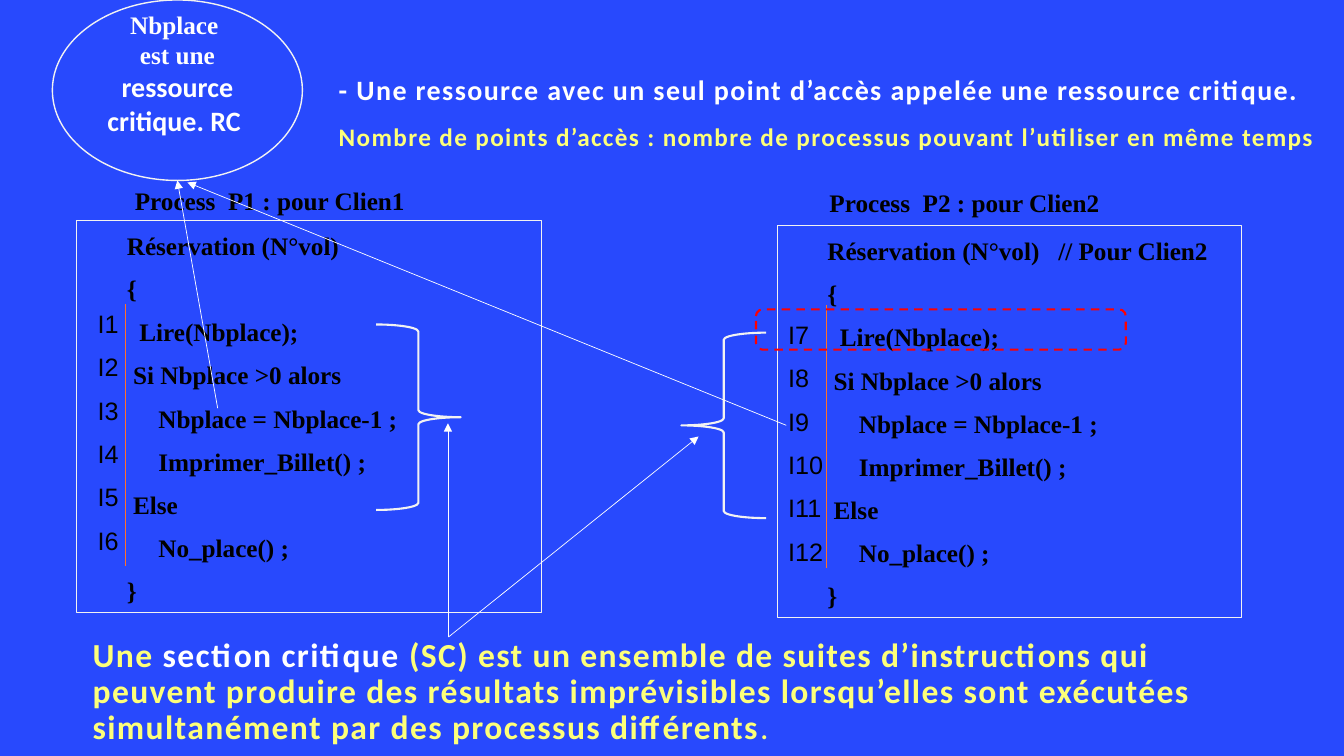
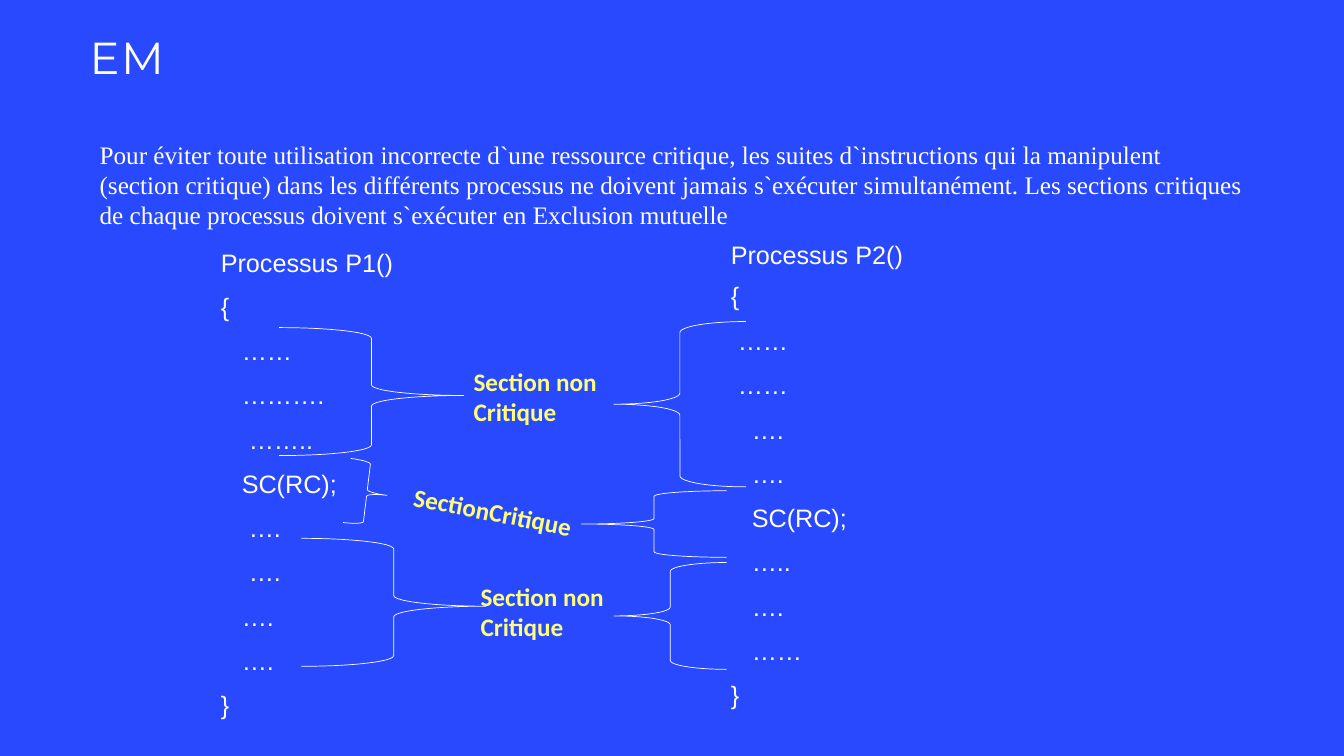
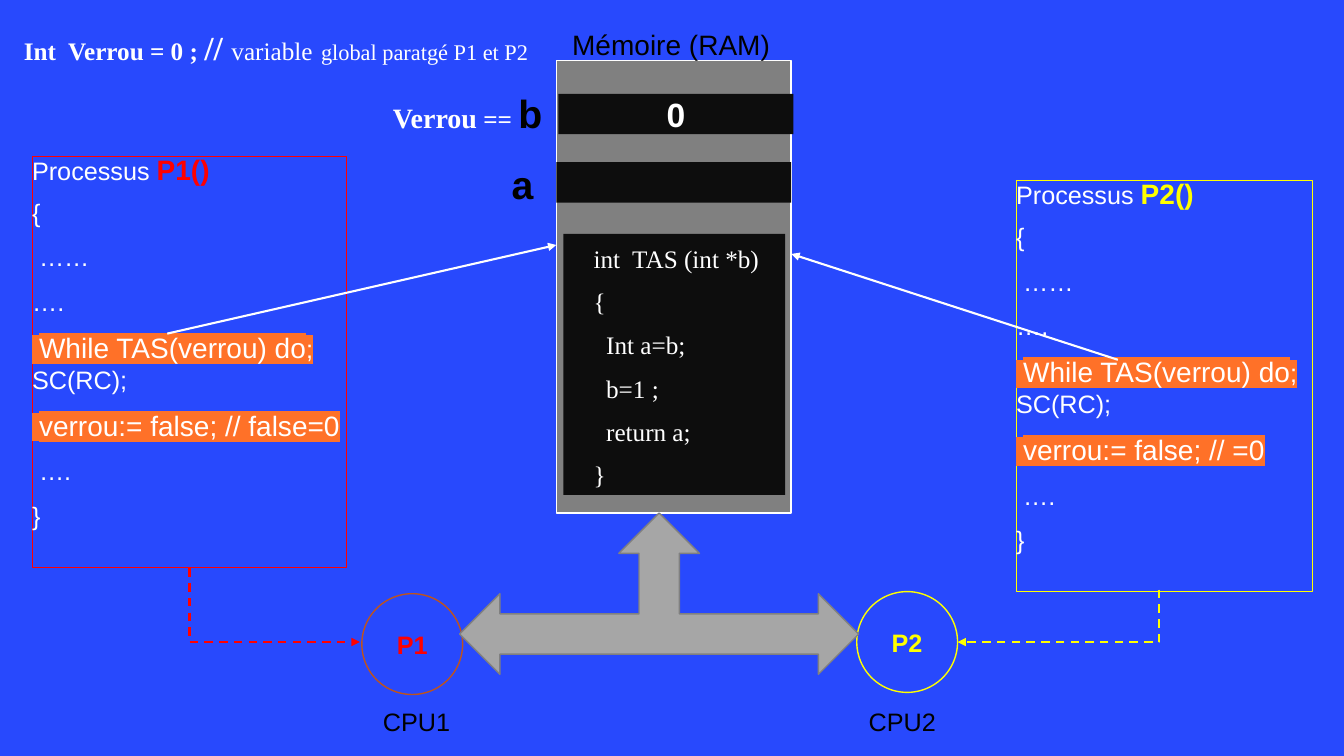
"""Build three slides on critical resources, mutual exclusion and the TAS instruction."""
from pptx import Presentation
from pptx.dml.color import RGBColor
from pptx.enum.dml import MSO_LINE
from pptx.enum.shapes import MSO_CONNECTOR, MSO_SHAPE
from pptx.enum.text import MSO_ANCHOR, PP_ALIGN
from pptx.oxml.ns import qn
from pptx.util import Pt
from lxml import etree

RECT, ROUNDED, OVAL = MSO_SHAPE.RECTANGLE, MSO_SHAPE.ROUNDED_RECTANGLE, MSO_SHAPE.OVAL
LEFT_BRACE, RIGHT_BRACE = MSO_SHAPE.LEFT_BRACE, MSO_SHAPE.RIGHT_BRACE
BUS_ARROW = MSO_SHAPE.LEFT_RIGHT_UP_ARROW
STRAIGHT, ELBOW = MSO_CONNECTOR.STRAIGHT, MSO_CONNECTOR.ELBOW
TOP, MIDDLE = MSO_ANCHOR.TOP, MSO_ANCHOR.MIDDLE
LEFT, CENTER = PP_ALIGN.LEFT, PP_ALIGN.CENTER
DASH = MSO_LINE.DASH
NO_TABLE_STYLE = "{2D5ABB26-0587-4C30-8999-92F81FD0307C}"


class Theme:
    """Colours, fonts and text styles of the deck."""
    blue, white, pale, black, ink = "2849FD", "FFFFFF", "F2F2F2", "000000", "0D0D0D"
    cream, yellow, red, orange, rust = "FDFF7A", "FFFF00", "FF0000", "FF7128", "BD541E"
    gray, silver = "808080", "A6A6A6"
    serif, sans, body, display = "Times New Roman", "Arial", "Calibri", "Montserrat"
    code = dict(font=serif, size=18, color=black, bold=True)
    prose = dict(font=serif, size=18, color=white)
    strong = dict(prose, bold=True)
    plain = dict(font=sans, size=18, color=white)
    dark = dict(plain, color=black)
    marked = dict(plain, mark=orange)
    big_marked = dict(marked, size=20)
    letter = dict(dark, size=28, bold=True)
    title = dict(font=display, size=32, color=white, spacing=1)
    lead = dict(font=body, size=20, color=white, bold=True, spacing=1)
    note = dict(lead, size=18, color=cream)
    definition = dict(lead, size=24, color=cream)
    section = dict(font=body, size=18, color=cream, bold=True)


def place(slide, kind, box, paragraphs=(), line=None, weight=0.75, fill=None, dash=None,
          anchor=TOP, align=LEFT, leading=None, before=0, inset=True, turn=0):
    """Add a text box (kind None) or preset shape holding (indent, runs) paragraphs."""
    left, top, width, height = map(Pt, box)
    if kind is None:
        item = slide.shapes.add_textbox(left, top, width, height)
    else:
        item = slide.shapes.add_shape(kind, left, top, width, height)
        item.shadow.inherit = False
        if fill:
            item.fill.solid()
            item.fill.fore_color.rgb = RGBColor.from_string(fill)
        else:
            item.fill.background()
        if line:
            item.line.color.rgb = RGBColor.from_string(line)
            item.line.width = Pt(weight)
            if dash:
                item.line.dash_style = dash
        else:
            item.line.fill.background()
    item.rotation = turn
    frame = item.text_frame
    frame.word_wrap = True
    frame.vertical_anchor = anchor
    if not inset:
        frame.margin_left = frame.margin_right = frame.margin_top = frame.margin_bottom = 0
    for number, (indent, runs) in enumerate(paragraphs):
        paragraph = frame.add_paragraph() if number else frame.paragraphs[0]
        paragraph.alignment = align
        paragraph.space_before = Pt(before)
        if leading:
            paragraph.line_spacing = leading
        if indent:
            paragraph._p.get_or_add_pPr().set("marL", str(Pt(indent)))
        for text, style in runs:
            run = paragraph.add_run()
            run.text = text
            run.font.size = Pt(style["size"])
            run.font.bold = style.get("bold", False)
            run.font.color.rgb = RGBColor.from_string(style["color"])
            run.font.name = style["font"]
            properties = run._r.get_or_add_rPr()
            if "spacing" in style:
                properties.set("spc", str(style["spacing"] * 100))
            if "mark" in style:
                highlight = etree.Element(qn("a:highlight"))
                etree.SubElement(highlight, qn("a:srgbClr"), val=style["mark"])
                properties.find(qn("a:solidFill")).addnext(highlight)
    return item


def link(slide, start, end, color=Theme.white, weight=0.5, kind=STRAIGHT, dash=None, arrow=True):
    """Draw a line between two points, by default with an arrowhead at its end."""
    item = slide.shapes.add_connector(kind, *map(Pt, start + end))
    item.line.color.rgb = RGBColor.from_string(color)
    item.line.width = Pt(weight)
    if dash:
        item.line.dash_style = dash
    if arrow:
        etree.SubElement(item.line._get_or_add_ln(), qn("a:tailEnd"), type="triangle")
    properties = item._element.spPr
    if kind == ELBOW:
        guides = properties.find(qn("a:prstGeom")).find(qn("a:avLst"))
        etree.SubElement(guides, qn("a:gd"), name="adj1", fmla="val 0")
    etree.SubElement(properties, qn("a:effectLst"))


deck = Presentation()
deck.slide_width, deck.slide_height = Pt(960), Pt(540)
backdrop = deck.slide_master.background.fill
backdrop.solid()
backdrop.fore_color.rgb = RGBColor.from_string(Theme.blue)
blank = deck.slide_layouts[6]
resource, exclusion, lock = [deck.slides.add_slide(blank) for _ in range(3)]

place(resource, None, (242, 39.6, 714, 90), [
    (0, [("- Une ressource avec un seul point d’accès appelée une ressource critique.", Theme.lead)]),
    (0, [("Nombre de points d’accès : nombre de processus pouvant l’utiliser en même temps",
          Theme.note)]),
], leading=1.5, inset=False)

reservation = [(0, "{"), (9, "Lire(Nbplace);"), (4.5, "Si\u00a0Nbplace >0 alors"),
               (22.5, "Nbplace = Nbplace-1\u00a0;"), (22.5, "Imprimer_Billet()\u00a0;"),
               (4.5, "Else"), (22.5, "No_place()\u00a0;"), (0, "}")]
clients = [
    ("Process  P1 : pour Clien1", (89.3, 128.9), "Réservation (N°vol)",
     (54.7, 157.7), (62.6, 218.2), 1, (89.3, 217.4)),
    ("Process  P2 : pour Clien2", (585.4, 130.3), "Réservation (N°vol)   // Pour Clien2",
     (555.1, 161.3), (555.8, 226.1), 7, (590.4, 218.2)),
]
for heading, heading_at, signature, code_at, steps_at, first_step, rule_at in clients:
    place(resource, RECT, code_at + (331.9, 280.1),
          [(28.8 + indent, [(text, Theme.code)]) for indent, text in [(0, signature)] + reservation],
          line=Theme.pale, leading=1.15, before=6)
    steps = resource.shapes.add_table(7, 1, *map(Pt, steps_at + (43, 236))).table
    steps.first_row = steps.horz_banding = False
    steps._tbl.tblPr.find(qn("a:tableStyleId")).text = NO_TABLE_STYLE
    steps.columns[0].width = Pt(43)
    for number, row in enumerate(steps.rows):
        row.height = Pt(31 if number < 6 else 50)
        cell = row.cells[0]
        cell.fill.background()
        if number < 6:
            run = cell.text_frame.paragraphs[0].add_run()
            run.text = f"I{first_step + number}"
            run.font.size = Pt(Theme.dark["size"])
            run.font.name = Theme.dark["font"]
            run.font.color.rgb = RGBColor.from_string(Theme.dark["color"])
    link(resource, rule_at, (rule_at[0], rule_at[1] + 187.2), Theme.orange, arrow=False)
    place(resource, None, heading_at + (271, 29), [(0, [(heading, Theme.code)])])

bubble_text = dict(Theme.section, size=20, color=Theme.white)
bubble = place(resource, OVAL, (37.4, 0, 178.6, 128.9), [
    (0, [("Nbplace ", Theme.strong)]),
    (0, [("est une ", Theme.strong), ("ressource critique. RC ", bubble_text)]),
], line=Theme.pale, weight=1, anchor=MIDDLE, align=CENTER)
bubble.text_frame.margin_bottom = Pt(28)
place(resource, ROUNDED, (540, 221, 264.2, 28.8), line=Theme.red, weight=1.5, dash=DASH)
place(resource, None, (66.2, 455.8, 865, 80), [
    (0, [("Une ", Theme.definition),
         ("section critique ", dict(Theme.definition, color=Theme.white)),
         ("(SC) est un ensemble de suites d’instructions qui", Theme.definition)]),
    (0, [("peuvent produire des résultats imprévisibles lorsqu’elles sont exécutées",
          Theme.definition)]),
    (0, [("simultanément par des processus différents", Theme.definition),
         (".", dict(Theme.definition, bold=False))]),
], leading=0.9, inset=False)
for left, top, turn in [(486.7, 237.6, 180), (268.6, 231.8, 0)]:
    place(resource, RIGHT_BRACE, (left, top, 60.5, 132.5), line=Theme.pale, weight=1.5, turn=turn)
for start, end in [((561.6, 303.8), (133.9, 130.3)), ((155.5, 291.6), (126.7, 128.9)),
                   ((320, 455), (320, 302.4)), ((320.4, 455), (499, 311.8))]:
    link(resource, start, end)

place(exclusion, None, (64.1, 25.2, 832.3, 72.7), [(0, [("EM", Theme.title)])],
      leading=0.9, inset=False)
place(exclusion, None, (64.1, 95.8, 832.3, 72.7), [(0, [(
    "Pour éviter toute utilisation incorrecte d`une ressource critique, les suites "
    "d`instructions qui la manipulent (section critique) dans les différents processus ne "
    "doivent jamais s`exécuter simultanément. Les sections critiques de chaque processus "
    "doivent s`exécuter en Exclusion mutuelle", Theme.prose)])])
first_process = [(0, "Processus P1()"), (0, "{"), (15, "……"), (15, "………."), (20, "…….."),
                 (15, "SC(RC);"), (20, "…."), (20, "…."), (15, "…."), (15, "…."), (0, "}")]
second_process = [(0, "Processus P2()"), (0, "{"), (5, "……"), (5, "……"), (15, "…."), (15, "…."),
                  (15, "SC(RC);"), (15, "….."), (15, "…."), (15, "……"), (0, "}")]
for listing, box, head_leading in [(first_process, (157.7, 176.4, 178.6, 345), 1.0),
                                   (second_process, (522, 173.5, 178.6, 335), 0.9)]:
    column = place(exclusion, None, box,
                   [(indent, [(text, Theme.plain)]) for indent, text in listing],
                   before=10, inset=False)
    for paragraph in column.text_frame.paragraphs[:2]:
        paragraph.line_spacing = head_leading
place(exclusion, None, (267.8, 351.4, 172.8, 28.8),
      [(20, [("SectionCritique", Theme.section)])], turn=11)
for left, top in [(336.2, 411.8), (331.2, 257.8)]:
    place(exclusion, None, (left, top, 130, 51.1),
          [(0, [(text, Theme.section)]) for text in ("Section non", "Critique")])
for box, turn, middle in [((415.4, 350.6, 103.7, 47.5), 0, 0.5),
                          ((247.7, 329, 28.8, 46.1), 186.9, 0.5),
                          ((438.5, 229.7, 94.3, 118.1), 0, 0.5),
                          ((438.5, 401.8, 80.6, 76.3), 0, 0.5),
                          ((199.4, 234, 131.8, 91.4), 180, 0.47),
                          ((215.3, 384.5, 131.8, 91.4), 180, 0.47)]:
    brace = place(exclusion, LEFT_BRACE, box, line=Theme.white, weight=0.5, turn=turn)
    brace.adjustments[1] = middle

declaration = place(lock, None, (0, 11.5, 443, 39), [(10, [
    ("Int  Verrou = 0 ; ", Theme.strong), ("// ", dict(Theme.strong, size=24)),
    ("variable", Theme.prose), (" ", dict(Theme.strong, size=24)),
    ("global paratgé P1 et P2", dict(Theme.prose, size=16))])], leading=1.15, before=6)

processors = [
    ("P1", Theme.red, (22.9, 111.6, 224.6, 293.8), "verrou:= false; // false=0",
     Theme.rust, (258.5, 424.1), "CPU1", 266.4),
    ("P2", Theme.yellow, (725.8, 128.9, 211.7, 293.8), "verrou:= false; // =0",
     Theme.yellow, (612, 422.6), "CPU2", 613.4),
]
for process, color, box, release, ring, cpu_at, cpu, cpu_left in processors:
    accent = dict(Theme.plain, color=color, bold=True)
    program = place(lock, RECT, box, [
        (0, [("Processus ", Theme.plain), (f"{process}()", dict(accent, size=20))]),
        (0, [("{", Theme.plain)]),
        (5, [("……", Theme.plain)]),
        (0, [("….", Theme.plain)]),
        (0, [(" ", Theme.marked), ("While TAS(verrou) do", Theme.big_marked), (";", Theme.marked)]),
        (0, [("SC(RC);", Theme.plain)]),
        (0, [(" ", Theme.marked), (release, Theme.big_marked)]),
        (5, [("….", Theme.plain)]),
        (0, [("}", Theme.plain)]),
    ], line=color, before=10, inset=False)
    lines = program.text_frame.paragraphs
    lines[0].line_spacing = lines[1].line_spacing = 0.9
    lines[5].space_before = Pt(0)
    place(lock, OVAL, cpu_at + (72, 72), [(0, [(process, accent)])],
          line=ring, weight=1, anchor=MIDDLE, align=CENTER)
    place(lock, None, (cpu_left, 501.1, 70, 28.8), [(0, [(cpu, Theme.dark)])])

link(lock, (119.5, 238.3), (397.4, 175), weight=1.5)
link(lock, (798.5, 257), (565.2, 181.4), weight=1.5)
link(lock, (135.4, 406.1), (257, 458.6), Theme.red, 1.5, ELBOW, DASH)
link(lock, (828, 421.2), (684, 458.6), Theme.yellow, 1.5, ELBOW, DASH)

place(lock, RECT, (397.4, 43.2, 167.8, 323.3), line=Theme.white, weight=1, fill=Theme.gray)
tas = [(0, "int  TAS (int *b)"), (0, "{"), (9, "Int a=b;"), (9, "b=1 ;"), (9, "return a;"), (0, "}")]
place(lock, RECT, (402.5, 167, 158.4, 186.5),
      [(14.4 + indent, [(text, Theme.prose)]) for indent, text in tas],
      fill=Theme.ink, leading=1.15, before=6)
place(lock, RECT, (398.9, 67, 167.8, 28.8),
      [(0, [("0", dict(Theme.plain, size=24, bold=True))])],
      fill=Theme.ink, anchor=MIDDLE, align=CENTER)
place(lock, RECT, (397.4, 115.9, 167.8, 28.8), fill=Theme.ink)
place(lock, None, (386.6, 15.8, 178.6, 28), [(15, [("Mémoire (RAM)", dict(Theme.dark, size=20))])])
place(lock, None, (343.4, 110.9, 58.3, 36.7), [(15, [("a", Theme.letter)])])
place(lock, BUS_ARROW, (328.3, 366.5, 285.1, 115.2), line=Theme.gray, weight=1, fill=Theme.silver)
place(lock, None, (268.6, 60.5, 144.7, 41), [(5, [
    ("Verrou", dict(Theme.strong, size=20)), (" == ", Theme.strong), ("b", Theme.letter)])])

deck.save("out.pptx")
